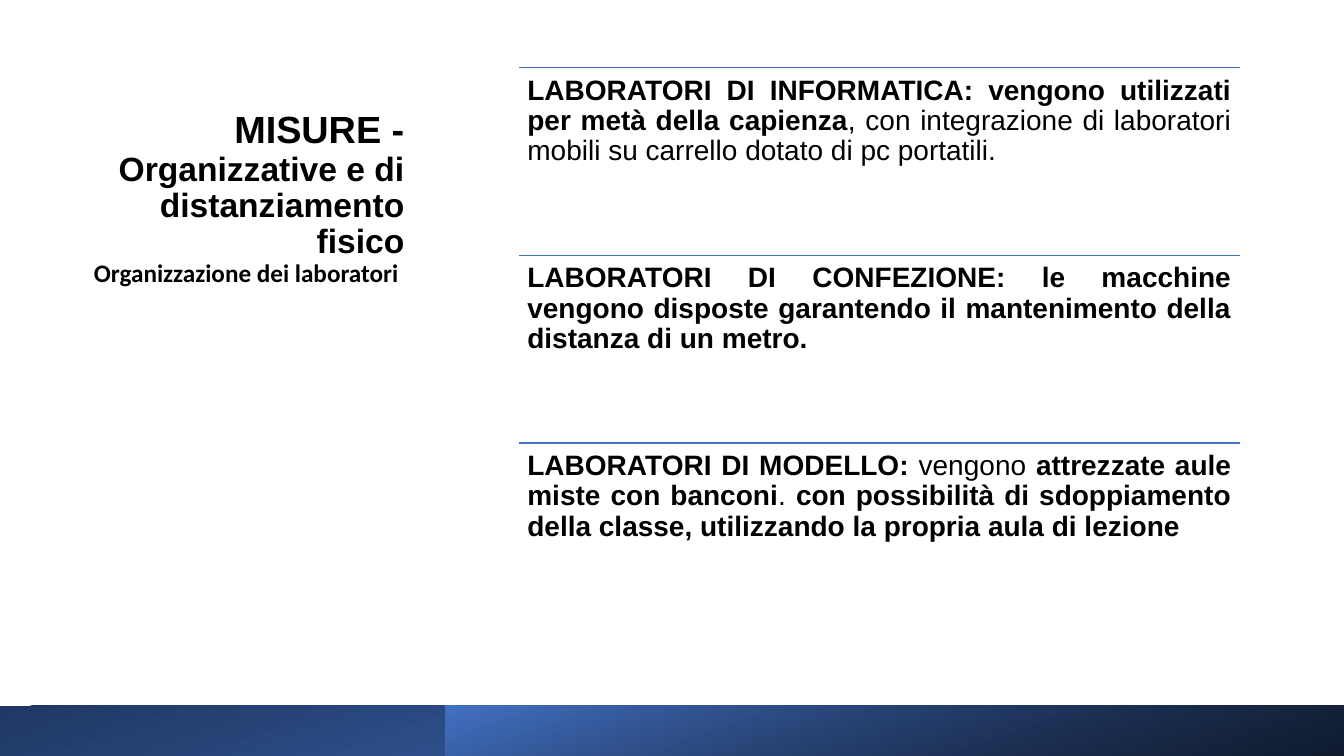
import dataclasses

import pptx
import pptx.dml.color
import pptx.enum.shapes
import pptx.enum.text
import pptx.oxml
import pptx.oxml.ns
import pptx.util

Cm = pptx.util.Cm
Pt = pptx.util.Pt
RGB = pptx.dml.color.RGBColor
ALIGN = pptx.enum.text.PP_ALIGN


@dataclasses.dataclass(frozen=True)
class Theme:
    """Colours, fonts and type sizes of the slide."""
    ink: str = "000000"
    rule: str = "4372C3"
    blue: str = "4472C4"
    navy: str = "1F3864"
    sans: str = "Arial"
    caption: str = "Calibri"
    heading_size: int = 27
    subheading_size: int = 24
    caption_size: int = 18
    body_size: int = 20


THEME = Theme()

LABS = [
    [("LABORATORI DI INFORMATICA: vengono utilizzati per metà della capienza", True),
     (", con integrazione di laboratori mobili su carrello dotato di pc portatili.", False)],
    [("LABORATORI DI CONFEZIONE: le macchine vengono disposte garantendo "
      "il mantenimento della distanza di un metro.", True)],
    [("LABORATORI DI MODELLO: ", True),
     ("vengono ", False),
     ("attrezzate aule miste con banconi", True),
     (". ", False),
     ("con possibilità di sdoppiamento della classe, "
      "utilizzando la propria aula di lezione", True)],
]


def add_paragraph_box(s, box, inset_x, inset_y, align):
    """Add a wrapping text box and return its paragraph."""
    tf = s.shapes.add_textbox(*map(Cm, box)).text_frame
    frame = {"word_wrap": True, "vertical_anchor": pptx.enum.text.MSO_ANCHOR.TOP,
             "margin_left": Cm(inset_x), "margin_right": Cm(inset_x),
             "margin_top": Cm(inset_y), "margin_bottom": Cm(inset_y)}
    for name, value in frame.items():
        setattr(tf, name, value)
    p = tf.paragraphs[0]
    for name, value in {"alignment": align, "line_spacing": 0.9}.items():
        setattr(p, name, value)
    return p


def add_run(p, text, size, font=THEME.sans, bold=True):
    """Append a formatted run to a paragraph."""
    r = p.add_run()
    r.text = text
    for name, value in {"size": Pt(size), "name": font, "bold": bold}.items():
        setattr(r.font, name, value)
    r.font.color.rgb = RGB.from_string(THEME.ink)


def add_title(s, box):
    """Place the right-aligned title with its caption."""
    p = add_paragraph_box(s, box, 0.25, 0.13, ALIGN.RIGHT)
    add_run(p, "MISURE - ", THEME.heading_size)
    add_run(p, "Organizzative e di distanziamento fisico", THEME.subheading_size)
    p.add_line_break()
    add_run(p, "Organizzazione dei laboratori ", THEME.caption_size, THEME.caption)


def add_gradient_bar(s, box, start, end, end_alpha=100):
    """Draw a bar shaded from its upper left to its lower right."""
    sp = s.shapes.add_shape(pptx.enum.shapes.MSO_SHAPE.RECTANGLE, *map(Cm, box))
    sp.shadow.inherit = False
    sp.line.fill.background()
    sp.fill.gradient()
    sp.fill.gradient_angle = 290
    for stop, colour in zip(sp.fill.gradient_stops, (start, end)):
        stop.color.rgb = RGB.from_string(colour)
    if end_alpha < 100:
        colour = sp.element.spPr.findall(".//" + pptx.oxml.ns.qn("a:srgbClr"))[-1]
        alpha = pptx.oxml.parse_xml(
            f'<a:alpha {pptx.oxml.ns.nsdecls("a")} val="{end_alpha * 1000}"/>')
        colour.append(alpha)


def add_footer(s, box):
    """Place the footer band and the overlay on its right two thirds."""
    left, top, width, height = box
    offset = 11.23
    add_gradient_bar(s, box, THEME.navy, THEME.blue)
    add_gradient_bar(s, (left + offset, top, width - offset, height),
                     THEME.blue, THEME.ink, 76)


def add_rule(s, left, top, width):
    """Draw a thin horizontal rule."""
    line = s.shapes.add_connector(pptx.enum.shapes.MSO_CONNECTOR.STRAIGHT,
                                  Cm(left), Cm(top), Cm(left + width), Cm(top))
    line.line.width = Pt(1)
    line.line.color.rgb = RGB.from_string(THEME.rule)
    line.element.spPr.append(
        pptx.oxml.parse_xml(f'<a:effectLst {pptx.oxml.ns.nsdecls("a")}/>'))


def add_lab_list(s, box, labs):
    """Stack the labs in equal rows, each under a rule."""
    left, top, width, height = box
    row_height = height / len(labs)
    for i, runs in enumerate(labs):
        row_top = top + i * row_height
        add_rule(s, left, row_top, width)
        p = add_paragraph_box(s, (left, row_top, width, row_height),
                              0.21, 0.21, ALIGN.JUSTIFY)
        for text, bold in runs:
            add_run(p, text, THEME.body_size, bold=bold)


def main():
    """Build and save the slide."""
    prs = pptx.Presentation()
    prs.slide_width, prs.slide_height = Cm(33.87), Cm(19.05)
    s = prs.slides.add_slide(prs.slide_layouts[6])
    add_title(s, (1.83, 2.67, 8.61, 12.29))
    add_footer(s, (0, 17.78, 33.87, 1.27))
    add_lab_list(s, (13.08, 1.7, 18.16, 14.2), LABS)
    prs.save("out.pptx")


if __name__ == "__main__":
    main()
